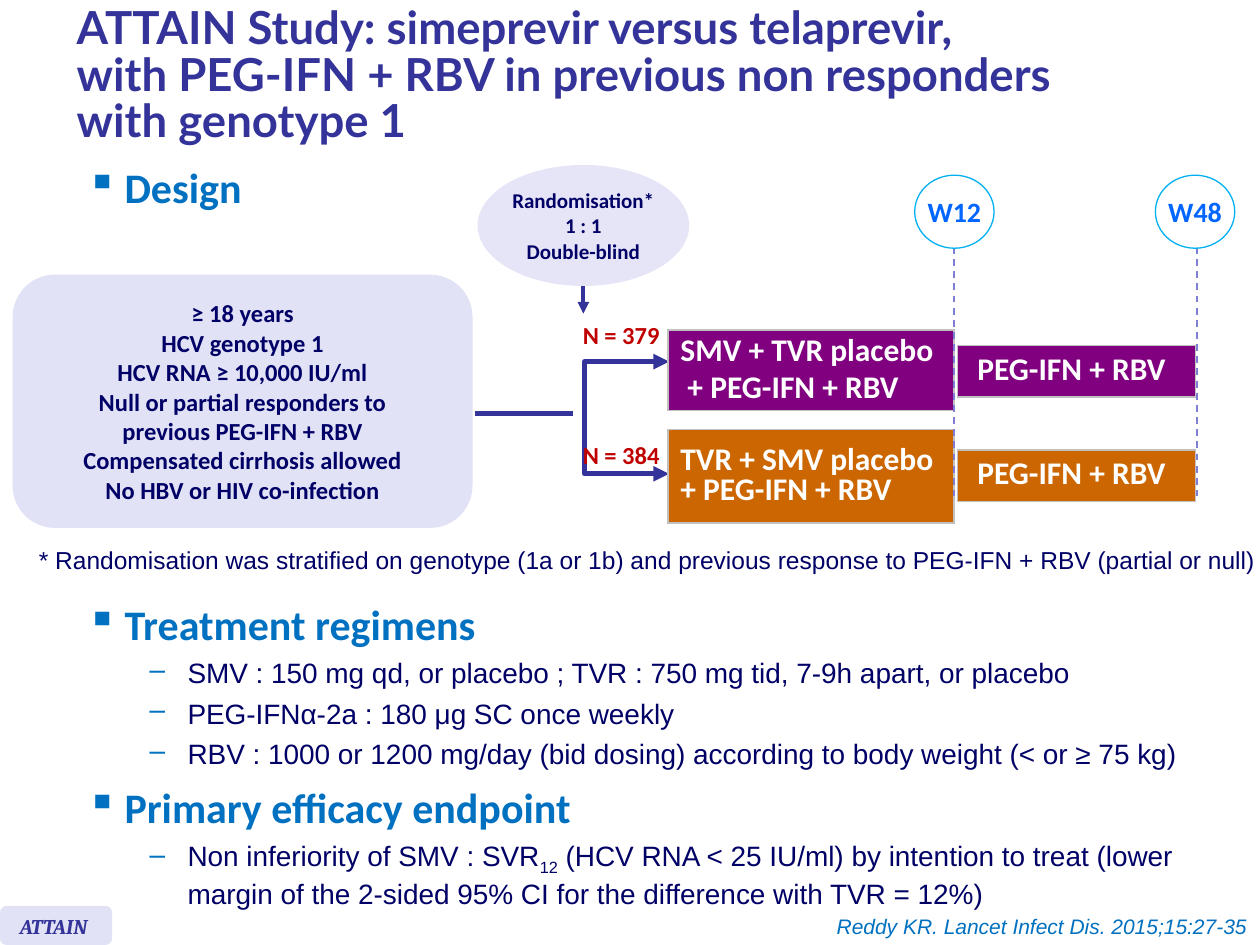
from dataclasses import dataclass

from lxml.etree import SubElement
from pptx import Presentation
from pptx.dml.color import RGBColor
from pptx.enum.dml import MSO_LINE
from pptx.enum.shapes import MSO_CONNECTOR, MSO_SHAPE
from pptx.enum.text import MSO_ANCHOR, PP_ALIGN
from pptx.oxml.ns import qn
from pptx.util import Inches, Pt

NAVY = RGBColor(0x00, 0x00, 0x66)
INDIGO = RGBColor(0x33, 0x33, 0x99)
BLUE = RGBColor(0x00, 0x70, 0xC0)
BRIGHT_BLUE = RGBColor(0x00, 0x66, 0xFF)
SKY = RGBColor(0x00, 0xB0, 0xF0)
LAVENDER = RGBColor(0xE2, 0xE2, 0xF6)
PALE_LAVENDER = RGBColor(0xE5, 0xE5, 0xF7)
VIOLET = RGBColor(0x7E, 0x7E, 0xD4)
PURPLE = RGBColor(0x80, 0x00, 0x80)
ORANGE = RGBColor(0xCC, 0x66, 0x00)
RED = RGBColor(0xC0, 0x00, 0x00)
SILVER = RGBColor(0xC0, 0xC0, 0xC0)
WHITE = RGBColor(0xFF, 0xFF, 0xFF)

deck = Presentation()
deck.slide_width, deck.slide_height = Inches(10), Inches(7.5)
page = deck.slides.add_slide(deck.slide_layouts[6])

# Grid of 100 columns by 75 rows
COLUMN = deck.slide_width / 100
ROW = deck.slide_height / 75


@dataclass(frozen=True)
class Frame:
    column: float
    row: float
    columns: float
    rows: float

    def lengths(self) -> tuple:
        return (int(self.column * COLUMN), int(self.row * ROW),
                int(self.columns * COLUMN), int(self.rows * ROW))


@dataclass(frozen=True)
class Style:
    size: float
    color: RGBColor
    name: str = "Calibri"
    bold: bool = True
    italic: bool = False
    align: PP_ALIGN = PP_ALIGN.LEFT
    spacing: float = 1.0
    before: float = 0


@dataclass(frozen=True)
class Bullet:
    mark: str
    level: int
    indent: float
    style: Style


HEADING = Bullet("▪", 0, 0.3, Style(24, BLUE, before=6))
DETAIL = Bullet("–", 1, 0.8, Style(16, NAVY, "Arial", bold=False, before=4))
ARM = Style(18, WHITE, spacing=0.8, before=4)


def set_style(para, style: Style, first: bool) -> None:
    para.alignment = style.align
    para.line_spacing = style.spacing
    para.space_before = Pt(0 if first else style.before)
    font = para.font
    font.size, font.name = Pt(style.size), style.name
    font.bold, font.italic = style.bold, style.italic
    font.color.rgb = style.color


def write(text_frame, lines: list, style: Style) -> None:
    for index, line in enumerate(lines):
        para = text_frame.add_paragraph() if index else text_frame.paragraphs[0]
        para.text = line
        set_style(para, style, index == 0)


def add_text(frame: Frame, lines: list, style: Style, wrap: bool = True,
             anchor: MSO_ANCHOR = MSO_ANCHOR.TOP) -> None:
    box = page.shapes.add_textbox(*frame.lengths())
    box.text_frame.word_wrap = wrap
    box.text_frame.vertical_anchor = anchor
    write(box.text_frame, lines, style)


def add_bullets(frame: Frame, items: list) -> None:
    """Each item is a bullet and its spans; every second span is a subscript."""
    box = page.shapes.add_textbox(*frame.lengths())
    box.text_frame.word_wrap = True
    for index, (bullet, *spans) in enumerate(items):
        para = box.text_frame.add_paragraph() if index else box.text_frame.paragraphs[0]
        para.level = bullet.level
        properties = para._p.get_or_add_pPr()
        properties.set("marL", str(Inches(bullet.indent)))
        properties.set("indent", str(Inches(-0.3)))
        color = SubElement(properties, qn("a:buClr"))
        SubElement(color, qn("a:srgbClr"), val=str(BLUE))
        SubElement(properties, qn("a:buChar"), char=bullet.mark)
        set_style(para, bullet.style, index == 0)
        for position, text in enumerate(spans):
            span = para.add_run()
            span.text = text
            if position % 2:
                span._r.get_or_add_rPr().set("baseline", "-25000")


def add_panel(kind: MSO_SHAPE, frame: Frame, fill: RGBColor, lines: list = (),
              style: Style = None, outline: RGBColor = None, wrap: bool = True) -> None:
    panel = page.shapes.add_shape(kind, *frame.lengths())
    panel.shadow.inherit = False
    panel.fill.solid()
    panel.fill.fore_color.rgb = fill
    if outline is None:
        panel.line.fill.background()
    else:
        panel.line.color.rgb, panel.line.width = outline, Pt(0.75)
    if lines:
        panel.text_frame.word_wrap = wrap
        panel.text_frame.vertical_anchor = MSO_ANCHOR.MIDDLE
        write(panel.text_frame, lines, style)


def add_line(start: tuple, end: tuple, color: RGBColor, width: float):
    line = page.shapes.add_connector(
        MSO_CONNECTOR.STRAIGHT, int(start[0] * COLUMN), int(start[1] * ROW),
        int(end[0] * COLUMN), int(end[1] * ROW))
    line.line.color.rgb, line.line.width = color, Pt(width)
    SubElement(line._element.spPr, qn("a:effectLst"))
    return line


def add_arrowheads(shape, *ends: str) -> None:
    outline = shape.line._get_or_add_ln()
    for end in ends:
        SubElement(outline, qn(f"a:{end}"), type="triangle")


def add_arm(frame: Frame, lines: list, fill: RGBColor) -> None:
    table = page.shapes.add_table(1, 1, *frame.lengths()).table
    table.first_row = table.horz_banding = False
    cell = table.cell(0, 0)
    cell.vertical_anchor = MSO_ANCHOR.MIDDLE
    write(cell.text_frame, lines, ARM)
    properties = cell._tc.get_or_add_tcPr()
    for side in ("lnL", "lnR", "lnT", "lnB"):
        border = SubElement(properties, qn(f"a:{side}"), w=str(Pt(1)))
        paint = SubElement(border, qn("a:solidFill"))
        SubElement(paint, qn("a:srgbClr"), val=str(SILVER))
    cell.fill.solid()
    cell.fill.fore_color.rgb = fill


# Title, reference and study tag
add_text(Frame(5.1, 0.8, 91.3, 10.7),
         ["ATTAIN Study: simeprevir versus telaprevir,\vwith PEG-IFN + RBV in "
          "previous non responders\vwith genotype 1"],
         Style(26, INDIGO, "Lato", spacing=0.85), anchor=MSO_ANCHOR.MIDDLE)
add_text(Frame(60.7, 72, 39.3, 3), ["Reddy KR. Lancet Infect Dis. 2015;15:27-35"],
         Style(12, BLUE, "Arial", bold=False, italic=True, align=PP_ALIGN.RIGHT))
add_panel(MSO_SHAPE.ROUNDED_RECTANGLE, Frame(0, 71.9, 8.9, 3.1), LAVENDER)
add_text(Frame(0.6, 72, 9.6, 3), ["ATTAIN"], Style(12, INDIGO, "Cambria", italic=True))

# Study population and randomisation
add_bullets(Frame(5.9, 12.3, 91.3, 4.7), [(HEADING, "Design")])
add_panel(MSO_SHAPE.OVAL, Frame(37.9, 13.1, 16.8, 9.6), PALE_LAVENDER,
          ["Randomisation*", "1 : 1", "Double-blind"],
          Style(12, NAVY, align=PP_ALIGN.CENTER), wrap=False)
add_panel(MSO_SHAPE.ROUNDED_RECTANGLE, Frame(1, 21.8, 36.5, 20.1), LAVENDER,
          ["≥ 18 years", "HCV genotype 1", "HCV RNA ≥ 10,000 IU/ml",
           "Null or partial responders to", "previous PEG-IFN + RBV",
           "Compensated cirrhosis allowed", "No HBV or HIV co-infection"],
          Style(14, NAVY, align=PP_ALIGN.CENTER))
add_arrowheads(add_line((46.3, 22.7), (46.3, 24.9), INDIGO, 2.25), "tailEnd")
add_line((37.7, 32.8), (45.5, 32.8), INDIGO, 3)

# Fork to the two arms
fork_points = [(int(column * COLUMN), int(row * ROW))
               for column, row in [(53.1, 28.7), (46.4, 28.7), (46.4, 37.6), (53.1, 37.6)]]
builder = page.shapes.build_freeform(*fork_points[0])
builder.add_line_segments(fork_points[1:], close=False)
fork = builder.convert_to_shape()
fork.shadow.inherit = False
fork.fill.background()
fork.line.color.rgb, fork.line.width = INDIGO, Pt(3)
add_arrowheads(fork, "headEnd", "tailEnd")

# Treatment arms
add_arm(Frame(53, 26.2, 22.7, 6.3), ["SMV + TVR placebo", " + PEG-IFN + RBV"], PURPLE)
add_arm(Frame(53, 34.1, 22.7, 7.4), ["TVR + SMV placebo + PEG-IFN + RBV"], ORANGE)
for row, fill in [(27.4, PURPLE), (35.7, ORANGE)]:
    add_arm(Frame(76, row, 18.9, 4.1), [" PEG-IFN + RBV"], fill)
for row, count in [(24.9, "N = 379"), (34.4, "N = 384")]:
    add_text(Frame(45.2, row, 8.2, 3.4), [count],
             Style(14, RED, align=PP_ALIGN.CENTER), wrap=False)

# Week markers
for column, dash_column, week in [(72.6, 75.7, "W12"), (91.7, 95, "W48")]:
    dash = add_line((dash_column, 19.6), (dash_column, 39.4), VIOLET, 1)
    dash.line.dash_style = MSO_LINE.DASH
    add_panel(MSO_SHAPE.OVAL, Frame(column, 13.9, 6.3, 5.8), WHITE, [week],
              Style(16, BRIGHT_BLUE, align=PP_ALIGN.CENTER), outline=SKY, wrap=False)

# Footnote, regimens and endpoint
add_text(Frame(2.1, 42.8, 98.8, 3.4),
         ["* Randomisation was stratified on genotype (1a or 1b) and previous response "
          "to PEG-IFN + RBV (partial or null)"],
         Style(14, NAVY, "Arial", bold=False), wrap=False)
add_bullets(Frame(5.9, 47, 91.3, 24.5), [
    (HEADING, "Treatment regimens"),
    (DETAIL, "SMV : 150 mg qd, or placebo ; TVR : 750 mg tid, 7-9h apart, or placebo"),
    (DETAIL, "PEG-IFNα-2a : 180 μg SC once weekly"),
    (DETAIL, "RBV : 1000 or 1200 mg/day (bid dosing) according to body weight (< or ≥ 75 kg)"),
    (HEADING, "Primary efficacy endpoint"),
    (DETAIL, "Non inferiority of SMV : SVR", "12",
     " (HCV RNA < 25 IU/ml) by intention to treat (lower margin of the 2-sided 95% CI "
     "for the difference with TVR = 12%)"),
])

deck.save("out.pptx")
